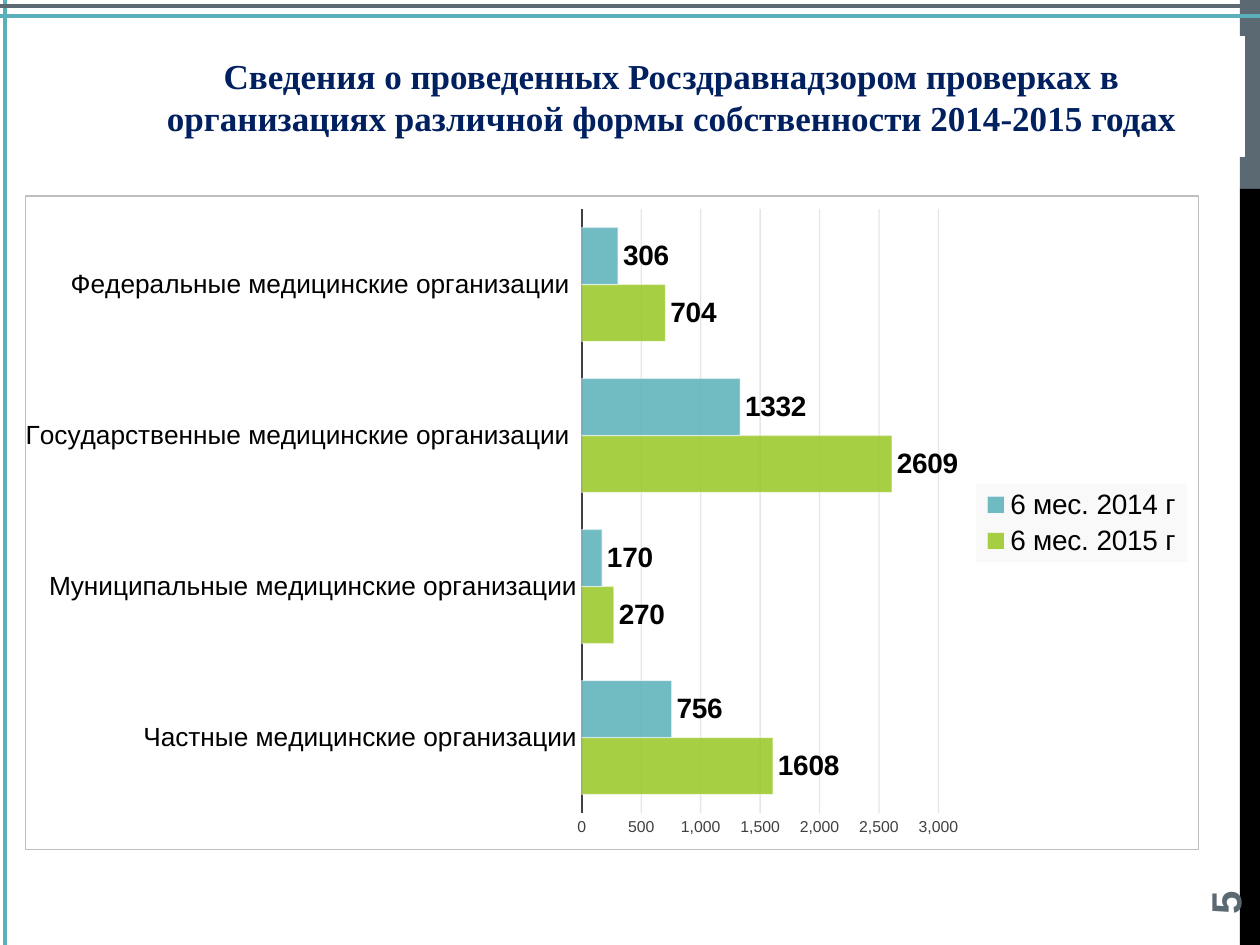
"""Build the slide on inspections in organisations of different ownership."""
import pptx
import pptx.chart.data
import pptx.dml.color
import pptx.enum.chart
import pptx.enum.shapes
import pptx.enum.text
import pptx.oxml
import pptx.oxml.ns
import pptx.util
from pptx.util import Inches

TEAL, SLATE, GREEN = "59B0B9", "5B6973", "98C723"
BLACK, WHITE, NAVY, GREY = "000000", "FFFFFF", "002060", "404040"
CATEGORIES = [
    "Частные медицинские организации",
    "Муниципальные медицинские организации",
    "Государственные медицинские организации ",
    "Федеральные медицинские организации ",
]
SERIES = [
    ("6 мес. 2015 г", [1608, 270, 2609, 704], GREEN),
    ("6 мес. 2014 г", [756, 170, 1332, 306], TEAL),
]


def rgb(color):
    """Turn a hex string into a colour."""
    return pptx.dml.color.RGBColor.from_string(color)


def set_fill(fill, color):
    """Give a solid fill."""
    fill.solid()
    fill.fore_color.rgb = rgb(color)


def set_line(line, color, width):
    """Give a solid line, with its width in points."""
    set_fill(line.fill, color)
    line.width = pptx.util.Pt(width)


def set_font(font, size, color, name="Arial", bold=False):
    """Set the face, size, colour and weight of a font."""
    font.name, font.size, font.bold = name, pptx.util.Pt(size), bold
    font.color.rgb = rgb(color)


def set_opacity(element, *percents):
    """Set the opacity of the first colours found in an element."""
    colors = list(element.iter(pptx.oxml.ns.qn("a:srgbClr")))
    for color, percent in zip(colors, percents):
        alpha = color.makeelement(pptx.oxml.ns.qn("a:alpha"), {"val": str(percent * 1000)})
        color.append(alpha)


def chart_xml(body):
    """Parse a chart fragment."""
    return pptx.oxml.parse_xml(body.replace(">", f" {pptx.oxml.ns.nsdecls('c', 'a')}>", 1))


def layout_xml(x, y, w, h, inner=False):
    """Make a manual layout from fractions of the chart."""
    target = '<c:layoutTarget val="inner"/>' if inner else ""
    sizes = "".join(f'<c:{k} val="{v}"/>' for k, v in zip("xywh", (x, y, w, h)))
    return chart_xml(f'<c:layout><c:manualLayout>{target}<c:xMode val="edge"/>'
                     f'<c:yMode val="edge"/>{sizes}</c:manualLayout></c:layout>')


def area_xml(fill, line=None):
    """Make the fill and border of a chart part."""
    border = (f'<a:ln w="9525"><a:solidFill><a:srgbClr val="{line}"/></a:solidFill></a:ln>'
              if line else "")
    return chart_xml(f'<c:spPr><a:solidFill><a:srgbClr val="{fill}"/></a:solidFill>'
                     f'{border}</c:spPr>')


def add_band(s, top, height, color):
    """Add a block of the band on the right edge."""
    sp = s.shapes.add_shape(pptx.enum.shapes.MSO_SHAPE.RECTANGLE, Inches(9.84),
                            Inches(top), Inches(0.16), Inches(height))
    sp.shadow.inherit = False
    set_fill(sp.fill, color)
    sp.line.fill.background()


def add_rule(s, x1, y1, x2, y2, color):
    """Add a thin edge line."""
    sp = s.shapes.add_connector(pptx.enum.shapes.MSO_CONNECTOR.STRAIGHT,
                                Inches(x1), Inches(y1), Inches(x2), Inches(y2))
    set_line(sp.line, color, 2.25)
    properties = sp.element.spPr
    properties.append(properties.makeelement(pptx.oxml.ns.qn("a:effectLst"), {}))


def add_page_number(s, text):
    """Add the turned page number."""
    sp = s.shapes.add_textbox(Inches(9), Inches(6.44), Inches(1.44), Inches(0.4))
    sp.rotation = 270
    tf = sp.text_frame
    tf.word_wrap = True
    tf.vertical_anchor = pptx.enum.text.MSO_ANCHOR.MIDDLE
    r = tf.paragraphs[0].add_run()
    r.text = text
    set_font(r.font, 24, SLATE, bold=True)


def add_title(s, text):
    """Fill the title and bring it in front of the band."""
    sp = s.shapes.title
    sp.left, sp.top, sp.width, sp.height = map(Inches, (0.78, 0.29, 9.1, 0.95))
    set_fill(sp.fill, WHITE)
    set_line(sp.line, WHITE, 0.75)
    tf = sp.text_frame
    tf.word_wrap = True
    tf.auto_size = pptx.enum.text.MSO_AUTO_SIZE.NONE
    tf.vertical_anchor = pptx.enum.text.MSO_ANCHOR.MIDDLE
    p = tf.paragraphs[0]
    p.alignment = pptx.enum.text.PP_ALIGN.CENTER
    r = p.add_run()
    r.text = text
    set_font(r.font, 20, NAVY, "Times New Roman", True)
    s.shapes.element.append(sp.element)


def format_axes(chart):
    """Style both axes and the gridlines."""
    none = pptx.enum.chart.XL_TICK_MARK.NONE
    for axis, size, color in ((chart.category_axis, 15, BLACK), (chart.value_axis, 9, GREY)):
        axis.major_tick_mark = axis.minor_tick_mark = none
        set_font(axis.tick_labels.font, size, color)
    set_line(chart.category_axis.format.line, GREY, 1.5)
    axis = chart.value_axis
    axis.minimum_scale, axis.maximum_scale, axis.major_unit = 0, 3000, 500
    axis.tick_labels.number_format = "#,##0"
    axis.tick_labels.number_format_is_linked = False
    axis.format.line.fill.background()
    set_line(axis.major_gridlines.format.line, "0D0D0D", 0.75)
    set_opacity(axis._element.find(pptx.oxml.ns.qn("c:majorGridlines")), 10)


def format_series(series, color):
    """Style the bars and value labels of a series."""
    set_fill(series.format.fill, color)
    set_line(series.format.line, WHITE, 0.75)
    set_opacity(series._element, 85, 50)
    labels = series.data_labels
    labels.show_value = True
    labels.number_format, labels.number_format_is_linked = "0", False
    labels.position = pptx.enum.chart.XL_LABEL_POSITION.OUTSIDE_END
    set_font(labels.font, 16, BLACK, bold=True)


def format_legend(chart):
    """Place the legend on the right on a pale ground."""
    chart.has_legend = True
    legend = chart.legend
    legend.position = pptx.enum.chart.XL_LEGEND_POSITION.RIGHT
    legend.include_in_layout = False
    set_font(legend.font, 16, BLACK)
    overlay = legend._element.find(pptx.oxml.ns.qn("c:overlay"))
    overlay.addprevious(layout_xml(0.81, 0.44, 0.18, 0.12))
    overlay.addnext(area_xml("F9F9F9"))


def add_chart(s):
    """Add the clustered bar chart of inspections."""
    data = pptx.chart.data.CategoryChartData()
    data.categories = CATEGORIES
    for name, values, _ in SERIES:
        data.add_series(name, values)
    chart = s.shapes.add_chart(pptx.enum.chart.XL_CHART_TYPE.BAR_CLUSTERED, Inches(0.2),
                               Inches(1.55), Inches(9.32), Inches(5.2), data).chart
    chart.has_title = False
    set_font(chart.font, 10, BLACK)
    plot = chart.plots[0]
    plot.gap_width, plot.overlap, plot.vary_by_categories = 65, 0, False
    for series, (_, _, color) in zip(plot.series, SERIES):
        format_series(series, color)
    format_axes(chart)
    format_legend(chart)
    root = chart.element.find(pptx.oxml.ns.qn("c:chart"))
    root.addnext(area_xml(WHITE, "BFBFBF"))
    area = root.find(pptx.oxml.ns.qn("c:plotArea"))
    for old in area.findall(pptx.oxml.ns.qn("c:layout")):
        area.remove(old)
    area.insert(0, layout_xml(0.474, 0.02, 0.304, 0.924, inner=True))


def main():
    """Build and save the slide."""
    prs = pptx.Presentation()
    prs.slide_width, prs.slide_height = Inches(10), Inches(7.5)
    s = prs.slides.add_slide(prs.slide_layouts[5])
    add_band(s, 0, 1.5, SLATE)
    add_band(s, 1.5, 6, BLACK)
    add_rule(s, 10, 0.13, 0, 0.13, TEAL)
    add_rule(s, 0.04, 0, 0.04, 7.5, TEAL)
    add_rule(s, 0, 0.05, 10, 0.05, SLATE)
    add_page_number(s, "5")
    add_title(s, "Сведения о проведенных Росздравнадзором проверках в "
                 "организациях различной формы собственности 2014-2015 годах")
    add_chart(s)
    prs.save("out.pptx")


if __name__ == "__main__":
    main()
